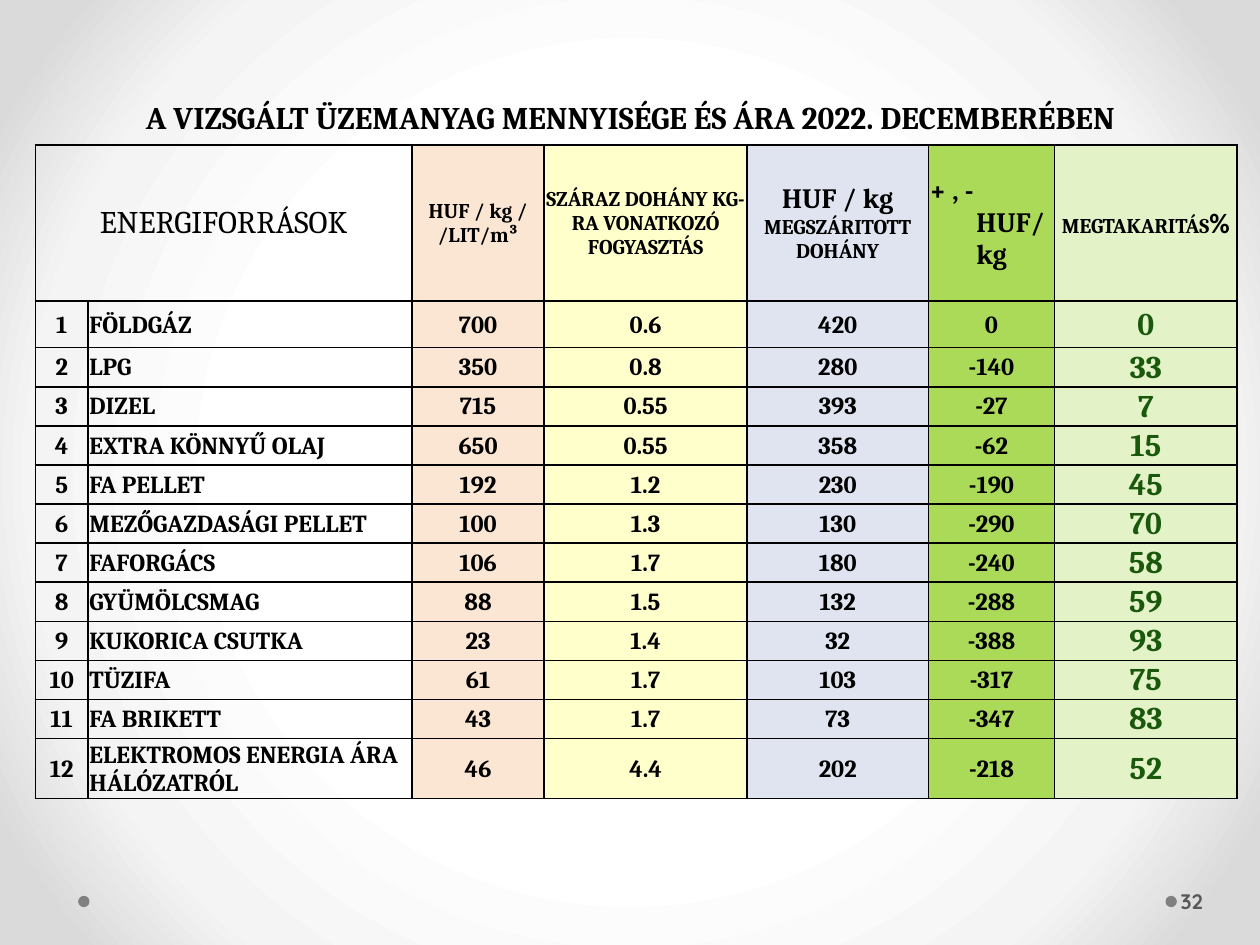
from lxml.etree import SubElement
from pptx import Presentation
from pptx.dml.color import RGBColor
from pptx.enum.shapes import MSO_SHAPE
from pptx.enum.text import MSO_ANCHOR, PP_ALIGN
from pptx.oxml import parse_xml
from pptx.oxml.ns import nsdecls, qn
from pptx.util import Inches, Pt

BLACK, GREEN = "000000", "1A580C"
COLUMN_WIDTHS = [0.42, 2.57, 1.05, 1.61, 1.44, 1, 1.45]
COLUMN_FILLS = [None, None, "FAE6D3", "FFFFCC", "DFE4F0", "ABD958", "E3F2C7"]
ROW_HEIGHTS = [1.24, 0.37] + [0.31] * 5 + [0.3] * 5 + [0.45]
HEADINGS = [
    [[("ENERGIFORRÁSOK", 18)]],
    None,
    [[("HUF / kg / /LIT/m³", 12)]],
    [[("SZÁRAZ DOHÁNY KG-RA VONATKOZÓ FOGYASZTÁS", 12)]],
    [[("HUF / kg", 16)], [("MEGSZÁRITOTT DOHÁNY", 12)]],
    [[("+ , -\vHUF/ kg", 16)]],
    [[("MEGTAKARITÁS", 12), ("%", 16)]],
]
FUELS = [
    ("FÖLDGÁZ", "700", "0.6", "420", "0", "0"),
    ("LPG", "350", "0.8", "280", "-140", "33"),
    ("DIZEL", "715", "0.55", "393", "-27", "7"),
    ("EXTRA KÖNNYŰ OLAJ", "650", "0.55", "358", "-62", "15"),
    ("FA PELLET", "192", "1.2", "230", "-190", "45"),
    ("MEZŐGAZDASÁGI PELLET", "100", "1.3", "130", "-290", "70"),
    ("FAFORGÁCS", "106", "1.7", "180", "-240", "58"),
    ("GYÜMÖLCSMAG", "88", "1.5", "132", "-288", "59"),
    ("KUKORICA CSUTKA", "23", "1.4", "32", "-388", "93"),
    ("TÜZIFA", "61", "1.7", "103", "-317", "75"),
    ("FA BRIKETT", "43", "1.7", "73", "-347", "83"),
    ("ELEKTROMOS ENERGIA ÁRA HÁLÓZATRÓL", "46", "4.4", "202", "-218", "52"),
]


def rgb(value):
    return RGBColor.from_string(value)


class SlideBuilder:
    font = "Cambria"

    def __init__(self, slide):
        self.slide = slide

    def style(self, run, size, color=BLACK, bold=True, font=None):
        run.font.name = font or self.font
        run.font.size = Pt(size)
        run.font.bold = bold
        run.font.color.rgb = rgb(color)

    def background(self, stops):
        colors = "".join(
            f'<a:gs pos="{position * 1000}"><a:srgbClr val="{color}"/></a:gs>'
            for position, color in stops
        )
        fill = self.slide.background.fill
        fill.solid()
        properties = self.slide.element.find(f".//{qn('p:bgPr')}")
        properties.replace(properties[0], parse_xml(
            f'<a:gradFill {nsdecls("a")} rotWithShape="1"><a:gsLst>{colors}</a:gsLst>'
            '<a:path path="circle"><a:fillToRect l="50000" t="50000" r="50000" b="50000"/>'
            "</a:path></a:gradFill>"
        ))

    def dot(self, left, top, size):
        dot = self.slide.shapes.add_shape(
            MSO_SHAPE.OVAL, Inches(left), Inches(top), Inches(size), Inches(size))
        dot.shadow.inherit = False
        dot.fill.solid()
        dot.fill.fore_color.rgb = rgb("808080")
        dot.line.fill.background()

    def title(self, text, left, top, width, height, bottom_inset):
        title = self.slide.shapes.title
        title.left, title.top = Inches(left), Inches(top)
        title.width, title.height = Inches(width), Inches(height)
        frame = title.text_frame
        frame.text = text
        frame.vertical_anchor = MSO_ANCHOR.BOTTOM
        frame.margin_bottom = Inches(bottom_inset)
        frame.paragraphs[0].alignment = PP_ALIGN.CENTER
        self.style(frame.paragraphs[0].runs[0], 18)

    def page_number(self, text, left, top, width, height):
        frame = self.slide.shapes.add_textbox(
            Inches(left), Inches(top), Inches(width), Inches(height)).text_frame
        frame.word_wrap = True
        frame.vertical_anchor = MSO_ANCHOR.MIDDLE
        frame.margin_left = Inches(0.03)
        frame.margin_right = Inches(0.05)
        frame.text = text
        self.style(frame.paragraphs[0].runs[0], 12, "595959", font="Quicksand")

    def cell(self, cell, fill):
        cell.vertical_anchor = MSO_ANCHOR.MIDDLE
        cell.margin_left = cell.margin_right = cell.margin_top = Inches(0.01)
        cell.margin_bottom = 0
        properties = cell._tc.get_or_add_tcPr()
        for side in ("a:lnL", "a:lnR", "a:lnT", "a:lnB"):
            border = SubElement(properties, qn(side), w=str(Pt(1)))
            ink = SubElement(border, qn("a:solidFill"))
            SubElement(ink, qn("a:srgbClr"), val=BLACK)
        if fill:
            cell.fill.solid()
            cell.fill.fore_color.rgb = rgb(fill)
        else:
            cell.fill.background()

    def heading(self, cell, lines, bold):
        frame = cell.text_frame
        for index, line in enumerate(lines):
            paragraph = frame.add_paragraph() if index else frame.paragraphs[0]
            paragraph.alignment = PP_ALIGN.CENTER
            for text, size in line:
                if "\v" in text:
                    paragraph.text = text
                else:
                    paragraph.add_run().text = text
                    self.style(paragraph.runs[-1], size, bold=bold,
                               font="Calibri" if text == "%" else None)
            if "\v" in paragraph.text:
                paragraph.alignment = PP_ALIGN.LEFT
                properties = paragraph._p.get_or_add_pPr()
                properties.set("marL", str(Inches(0.37)))
                properties.set("indent", str(-Inches(0.37)))
                for run in paragraph.runs:
                    self.style(run, size)

    def value(self, cell, text, column):
        cell.text_frame.text = text
        paragraph = cell.text_frame.paragraphs[0]
        paragraph.alignment = PP_ALIGN.LEFT if column == 1 else PP_ALIGN.CENTER
        saving = column == len(COLUMN_WIDTHS) - 1
        self.style(paragraph.runs[0], 18 if saving else 14, GREEN if saving else BLACK)

    def fuel_table(self, left, top):
        table = self.slide.shapes.add_table(
            len(ROW_HEIGHTS), len(COLUMN_WIDTHS), Inches(left), Inches(top),
            Inches(sum(COLUMN_WIDTHS)), Inches(sum(ROW_HEIGHTS))).table
        table.first_row = table.horz_banding = False
        for column, width in zip(table.columns, COLUMN_WIDTHS):
            column.width = Inches(width)
        for row, height in zip(table.rows, ROW_HEIGHTS):
            row.height = Inches(height)
            for cell, fill in zip(row.cells, COLUMN_FILLS):
                self.cell(cell, fill)
        table.cell(0, 0).merge(table.cell(0, 1))
        for column, lines in enumerate(HEADINGS):
            if lines:
                self.heading(table.cell(0, column), lines, bold=column > 0)
        for number, fuel in enumerate(FUELS, 1):
            for column, text in enumerate((str(number), *fuel)):
                self.value(table.cell(number, column), text, column)


def main():
    presentation = Presentation()
    presentation.slide_width, presentation.slide_height = Inches(10), Inches(7.5)
    builder = SlideBuilder(presentation.slides.add_slide(presentation.slide_layouts[5]))
    builder.background([(50, "FFFFFF"), (76, "F4F4F4"), (92, "DADADA")])
    for left in (9.25, 0.62):
        builder.dot(left, 7.11, 0.09)
    builder.title("A VIZSGÁLT ÜZEMANYAG MENNYISÉGE ÉS ÁRA 2022. DECEMBERÉBEN",
                  0.24, 0.29, 9.53, 1.1, 0.31)
    builder.page_number("32", 9.34, 6.95, 0.61, 0.4)
    builder.fuel_table(0.28, 1.15)
    presentation.save("out.pptx")


if __name__ == "__main__":
    main()
